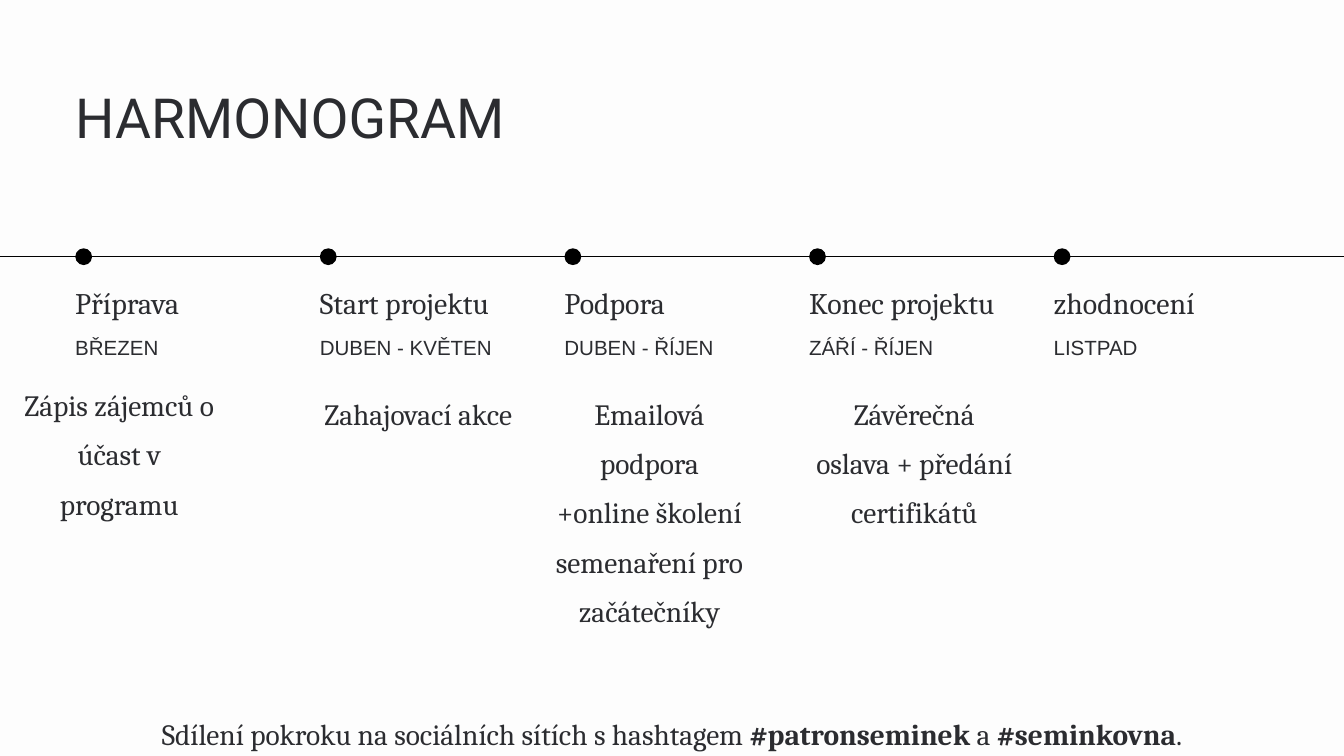
from pptx import Presentation
from pptx.dml.color import RGBColor
from pptx.enum.shapes import MSO_CONNECTOR, MSO_SHAPE
from pptx.enum.text import MSO_ANCHOR, MSO_AUTO_SIZE, PP_ALIGN
from pptx.oxml.ns import qn
from pptx.util import Inches, Pt
from lxml.etree import SubElement

COLORS = {"background": "FDFDFD", "text": "2B2C30", "timeline": "000000"}
FORMATS = {
    "title": {"name": "Roboto", "size": Pt(59.2)},
    "stage": {"name": "Cambria", "size": Pt(32)},
    "month": {"name": "Arial", "size": Pt(22)},
    "body": {"name": "Cambria", "size": Pt(31.5)},
}
PARAGRAPHS = {
    "title": {"alignment": PP_ALIGN.LEFT},
    "stage": {"alignment": PP_ALIGN.LEFT},
    "month": {"alignment": PP_ALIGN.JUSTIFY, "line_spacing": 1.5},
    "body": {"alignment": PP_ALIGN.CENTER, "line_spacing": 1.4},
}


def add_text(left, top, width, height, style, *runs):
    """Add a one-paragraph text box; every second run is bold."""
    box = slide.shapes.add_textbox(Inches(left), Inches(top), Inches(width), Inches(height))
    frame = box.text_frame
    frame_format = {
        "margin_left": 0, "margin_top": 0, "margin_right": 0, "margin_bottom": 0,
        "word_wrap": True, "auto_size": MSO_AUTO_SIZE.SHAPE_TO_FIT_TEXT,
        "vertical_anchor": MSO_ANCHOR.TOP,
    }
    for name, value in frame_format.items():
        setattr(frame, name, value)
    paragraph = frame.paragraphs[0]
    for name, value in PARAGRAPHS[style].items():
        setattr(paragraph, name, value)
    for index, text in enumerate(runs):
        run = paragraph.add_run()
        run.text = text
        for name, value in FORMATS[style].items():
            setattr(run.font, name, value)
        run.font.bold = index % 2 == 1
        run.font.color.rgb = RGBColor.from_string(COLORS["text"])


presentation = Presentation()
presentation.slide_width = Inches(20)
presentation.slide_height = Inches(11.25)
slide = presentation.slides.add_slide(presentation.slide_layouts[6])
slide.background.fill.solid()
slide.background.fill.fore_color.rgb = RGBColor.from_string(COLORS["background"])

# Title
add_text(1.12, 1.24, 14.77, 0.86, "title", "HARMONOGRAM")

# Timeline across the slide
LINE_Y = 3.82
timeline = slide.shapes.add_connector(
    MSO_CONNECTOR.STRAIGHT, 0, Inches(LINE_Y), presentation.slide_width, Inches(LINE_Y))
timeline.line.color.rgb = RGBColor.from_string(COLORS["timeline"])
timeline.line.width = Pt(0.75)
SubElement(timeline._element.spPr, qn("a:effectLst"))

# Stages: a dot on the line, a name and the months
FIRST_LEFT, PITCH, DOT = 1.12, 3.64, 0.25
stages = [
    ("Příprava", "BŘEZEN"),
    ("Start projektu", "DUBEN - KVĚTEN"),
    ("Podpora", "DUBEN - ŘÍJEN"),
    ("Konec projektu", "ZÁŘÍ - ŘÍJEN"),
    ("zhodnocení", "LISTPAD"),
]
for index, (stage, months) in enumerate(stages):
    left = FIRST_LEFT + index * PITCH
    dot = slide.shapes.add_shape(
        MSO_SHAPE.OVAL, Inches(left), Inches(LINE_Y - DOT / 2), Inches(DOT), Inches(DOT))
    dot.shadow.inherit = False
    dot.fill.solid()
    dot.fill.fore_color.rgb = RGBColor.from_string(COLORS["timeline"])
    dot.line.fill.background()
    add_text(left, 4.24, 3.13, 0.48, "stage", stage)
    add_text(left, 4.8, 3.13, 0.41, "month", months)

# Descriptions below the stages
descriptions = [
    (0.31, 5.55, 1.8, "Zápis zájemců o účast v programu"),
    (4.76, 5.68, 1.19, "Zahajovací akce"),
    (8.2, 5.68, 4.21, "Emailová podpora +online školení semenaření pro začátečníky"),
    (12.14, 5.68, 2.4, "Závěrečná oslava + předání certifikátů"),
]
for left, top, height, text in descriptions:
    add_text(left, top, 2.93, height, "body", text)

# Closing note with bold hashtags
add_text(1.42, 10.45, 17.16, 0.59, "body",
         "Sdílení pokroku na sociálních sítích s hashtagem ", "#patronseminek",
         " a ", "#seminkovna", ".")

presentation.save("out.pptx")
